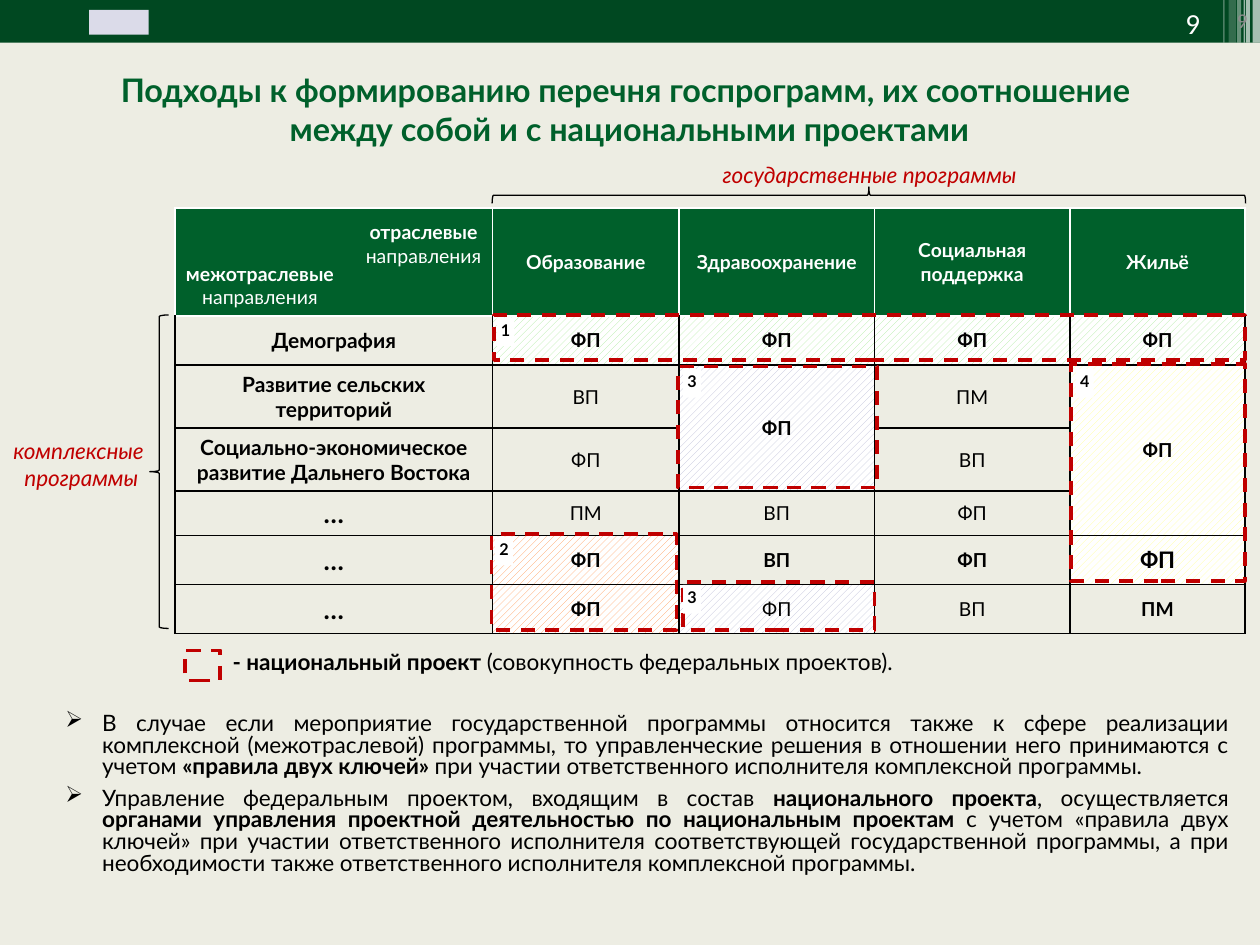
from dataclasses import dataclass
from itertools import product

from pptx import Presentation
from pptx import util as u
from pptx.dml.color import RGBColor
from pptx.enum import dml, shapes, text
from pptx.oxml import ns
from lxml import etree


@dataclass(frozen=True)
class Theme:
    """Colours, fonts and type sizes of the slide."""
    face: str = "Lato"
    side: str = "Calibri"
    page: str = "EDEDE3"
    bar: str = "004821"
    green: str = "00602B"
    red: str = "C00000"
    white: str = "FFFFFF"
    black: str = "000000"
    grey: str = "8C8C8C"
    mark: str = "DBDBE9"
    head: float = 18.5
    body: float = 12.9
    axis: float = 11.1
    cell: float = 11
    row: float = 12
    dots: float = 15
    big: float = 13
    tag: float = 9.2


T = Theme()
TITLE = ("Подходы к формированию перечня госпрограмм, их соотношение "
         "\vмежду собой и с национальными проектами")
HEADS = ["Образование", "Здравоохранение", "Социальная поддержка", "Жильё"]
ROWS = [
    ["Демография"] + ["**ФП**"] * 4,
    ["Развитие сельских территорий", "ВП", "**ФП**", "ПМ", "**ФП**"],
    ["Социально-экономическое развитие Дальнего Востока", "ФП", "", "ВП", ""],
    ["…", "ПМ", "ВП", "ФП", ""],
    ["…"] + ["**ФП**", "**ВП**", "**ФП**", "**ФП**"],
    ["…", "**ФП**", "ФП", "ВП", "**ПМ**"],
]
COLS = [1.09, 6.4, 3.76, 3.94, 3.94, 3.53]
HIGH = [0.81, 2.18, 0.99, 1.24, 1.24, 0.86, 0.99, 0.99]
SPANS = [(0, 2, 0, 5), (2, 0, 7, 0), (3, 3, 4, 3), (3, 5, 5, 5)]
HATCH = {
    "ADEB9F": [(2, 2), (2, 3), (2, 4), (2, 5)],
    "BEBFD8": [(3, 3), (7, 3)],
    "FFFF99": [(3, 5), (6, 5)],
    "FF9D5B": [(6, 2), (7, 2)],
}
STRIPES = [(25.25, 0.15, 65), (25.12, 0.08, 65), (25.07, 0.03, 60),
           (24.94, 0.08, 40), (24.77, 0.15, 20), (24.66, 0.03, 30)]
FRAMES = [(9.96, 6.35, 15.14, 0.91), (9.91, 10.77, 3.73, 1.93),
          (3.73, 13.11, 0.71, 0.61), (13.67, 7.39, 4.01, 2.44),
          (21.59, 7.34, 3.51, 4.37), (13.77, 11.73, 3.86, 0.97)]
TAGS = [("1", 10.01, 6.4), ("2", 9.98, 10.82), ("3", 13.77, 7.44),
        ("3", 13.77, 11.79), ("4", 21.69, 7.44)]
NOTES = [
    "В случае если мероприятие государственной программы относится также к сфере "
    "реализации комплексной (межотраслевой) программы, то управленческие решения "
    "в отношении него принимаются с учетом **«правила двух ключей» **при участии "
    "ответственного исполнителя комплексной программы.",
    "Управление федеральным проектом, входящим в состав **национального проекта**, "
    "осуществляется **органами управления проектной деятельностью по национальным "
    "проектам **с учетом «правила двух ключей» при участии ответственного "
    "исполнителя соответствующей государственной программы, а при необходимости "
    "также ответственного исполнителя комплексной программы.",
]


def cm(*vals):
    """Turn numbers into lengths."""
    return [u.Cm(v) for v in vals]


def rgb(code):
    """Turn a hex code into a colour."""
    return RGBColor.from_string(code)


def write(par, words, size, ink=T.black, align="CENTER", **style):
    """Write a paragraph whose **marked** parts are bold."""
    par.alignment = text.PP_ALIGN[align]
    for i, part in enumerate(words.split("**")):
        for j, line in enumerate(part.split("\v")):
            if j:
                par.add_line_break()
            if not line:
                continue
            run = par.add_run()
            run.text = line
            look = {"name": T.face, "size": u.Pt(size), "bold": i % 2 == 1, **style}
            for key, val in look.items():
                setattr(run.font, key, val)
            run.font.color.rgb = rgb(ink)


def label(slide, box, words, size, mid=False, **style):
    """Add a text box with one paragraph."""
    frame = slide.shapes.add_textbox(*cm(*box)).text_frame
    frame.word_wrap = True
    if mid:
        frame.vertical_anchor = text.MSO_ANCHOR.MIDDLE
    write(frame.paragraphs[0], words, size, **style)


def block(slide, box, fill=None, line=None, width=2, dash=False, kind="RECTANGLE"):
    """Add a preset shape with plain fill and line."""
    item = slide.shapes.add_shape(shapes.MSO_SHAPE[kind], *cm(*box))
    item.shadow.inherit = False
    if fill:
        item.fill.solid()
        item.fill.fore_color.rgb = rgb(fill)
    else:
        item.fill.background()
    if line:
        item.line.color.rgb = rgb(line)
        item.line.width = u.Pt(width)
        if dash:
            item.line.dash_style = dml.MSO_LINE.DASH
    else:
        item.line.fill.background()
    return item


def stripe(slide, left, width, part):
    """Add a see-through stripe to the top bar."""
    item = block(slide, (left, 0, width, 0.86), fill=T.white)
    tint = item.element.spPr.find(".//" + ns.qn("a:srgbClr"))
    etree.SubElement(tint, ns.qn("a:alpha")).set("val", str(part * 1000))


def tag(slide, num, left, top):
    """Add a numbered white tag."""
    frame = block(slide, (left, top, 0.36, 0.58), fill=T.white).text_frame
    frame.margin_left = frame.margin_right = 0
    frame.word_wrap = True
    frame.vertical_anchor = text.MSO_ANCHOR.TOP
    par = frame.paragraphs[0]
    par.line_spacing = 0.8
    write(par, f"**{num}**", T.tag)


def edge(cell, inks):
    """Draw the left, right, top and bottom cell borders."""
    props = cell._tc.get_or_add_tcPr()
    for side, ink in zip("LRTB", inks):
        line = etree.SubElement(props, ns.qn(f"a:ln{side}"), w=str(u.Pt(1)))
        if ink:
            fill = etree.SubElement(line, ns.qn("a:solidFill"))
            etree.SubElement(fill, ns.qn("a:srgbClr"), val=ink)
        else:
            etree.SubElement(line, ns.qn("a:noFill"))


def inks(row, col):
    """Choose the border colours for a place in the grid."""
    if row == 0:
        return [None, None, None, T.white if col else None]
    if col == 0:
        return [None, T.white if row == 1 else T.black, None, None]
    if row == 1:
        return [T.white] * 4
    return [T.black, T.black, T.white if row == 2 else T.black, T.black]


def paint(cell, row, col, tints):
    """Fill a cell by its place in the grid."""
    if (row, col) in tints:
        cell.fill.patterned()
        cell.fill.pattern = dml.MSO_PATTERN.WIDE_UPWARD_DIAGONAL
        cell.fill.fore_color.rgb = rgb(tints[row, col])
        cell.fill.back_color.rgb = rgb(T.white)
    elif row == 1 and col:
        cell.fill.solid()
        cell.fill.fore_color.rgb = rgb(T.green)
    else:
        cell.fill.background()


def entry(row, col):
    """Give the words, size and ink of a cell."""
    if row == 0 or col == 0 or (row, col) == (1, 1):
        return "", T.cell, T.black
    if row == 1:
        return f"**{HEADS[col - 2]}**", T.cell, T.white
    words = ROWS[row - 2][col - 1]
    if col == 1:
        return f"**{words}**", T.dots if words == "…" else T.row, T.black
    return words, T.big if (row, col) == (6, 5) else T.cell, T.black


def matrix(slide):
    """Add the table of programmes and directions."""
    size = cm(2.44, 3.38, sum(COLS), sum(HIGH))
    grid = slide.shapes.add_table(len(HIGH), len(COLS), *size).table
    grid.first_row = grid.horz_banding = False
    for col, width in zip(grid.columns, COLS):
        col.width = u.Cm(width)
    for row, high in zip(grid.rows, HIGH):
        row.height = u.Cm(high)
    tints = {spot: ink for ink, spots in HATCH.items() for spot in spots}
    for row, col in product(range(len(HIGH)), range(len(COLS))):
        cell = grid.cell(row, col)
        edge(cell, inks(row, col))
        paint(cell, row, col, tints)
        cell.vertical_anchor = text.MSO_ANCHOR.MIDDLE
        words, pts, ink = entry(row, col)
        if words:
            write(cell.text_frame.paragraphs[0], words, pts, ink)
        else:
            for side in ("left", "right", "top", "bottom"):
                setattr(cell, f"margin_{side}", 0)
    for top, left, low, right in SPANS:
        grid.cell(top, left).merge(grid.cell(low, right))


def notes(slide):
    """Add the bulleted notes."""
    frame = slide.shapes.add_textbox(*cm(1.07, 14.27, 23.95, 3.56)).text_frame
    frame.word_wrap = True
    for i, words in enumerate(NOTES):
        par = frame.add_paragraph() if i else frame.paragraphs[0]
        props = par._p.get_or_add_pPr()
        props.set("marL", str(u.Cm(0.74)))
        props.set("indent", str(u.Cm(-0.74)))
        etree.SubElement(props, ns.qn("a:buChar"), char="➢")
        par.line_spacing = 0.8
        par.space_after = u.Pt(5.5)
        write(par, words, T.body, align="JUSTIFY")


def title(slide):
    """Place and format the title."""
    item = slide.shapes.title
    place = zip(("left", "top", "width", "height"), cm(0.38, 1.65, 24.61, 1.09))
    for key, val in place:
        setattr(item, key, val)
    frame = item.text_frame
    frame.auto_size = text.MSO_AUTO_SIZE.NONE
    frame.vertical_anchor = text.MSO_ANCHOR.MIDDLE
    write(frame.paragraphs[0], TITLE, T.head, T.green, bold=True)


def main():
    """Build and save the slide."""
    deck = Presentation()
    deck.slide_width, deck.slide_height = cm(25.4, 19.05)
    slide = deck.slides.add_slide(deck.slide_layouts[5])
    slide.background.fill.solid()
    slide.background.fill.fore_color.rgb = rgb(T.page)
    block(slide, (0, 0, 25.4, 0.86), fill=T.bar)
    for args in STRIPES:
        stripe(slide, *args)
    block(slide, (1.8, 0.2, 1.2, 0.5), fill=T.mark)
    num = {"align": "RIGHT", "name": T.side, "mid": True}
    label(slide, (18.52, -0.05, 5.92, 1.02), "9", 16.6, ink=T.white, **num)
    title(slide)
    matrix(slide)
    for box in FRAMES:
        block(slide, box, line=T.red, dash=True)
    for args in TAGS:
        tag(slide, *args)
    label(slide, (4.44, 12.93, 20.07, 0.81),
          "**- национальный проект **(совокупность федеральных проектов).",
          T.body, align="JUSTIFY")
    notes(slide)
    axis = {"ink": T.red, "italic": True}
    label(slide, (11.18, 3.12, 12.7, 0.81), "государственные программы", T.body, **axis)
    label(slide, (-2.13, 8.69, 7.54, 1.37), "комплексные \vпрограммы", T.body, **axis)
    brace = {"line": T.black, "width": 0.75, "kind": "LEFT_BRACE"}
    block(slide, (3.02, 6.35, 0.38, 6.32), **brace)
    block(slide, (17.35, -3.66, 0.33, 15.19), **brace).rotation = 90
    label(slide, (7.09, 4.32, 2.9, 1.19), "**отраслевые **направления", T.axis, ink=T.white)
    label(slide, (3.4, 5.16, 3.68, 1.19), "**межотраслевые **направления", T.axis, ink=T.white)
    label(slide, (23.29, -0.1, 2.11, 1.02), "9", 12, ink=T.grey, **num)
    deck.save("out.pptx")


if __name__ == "__main__":
    main()
